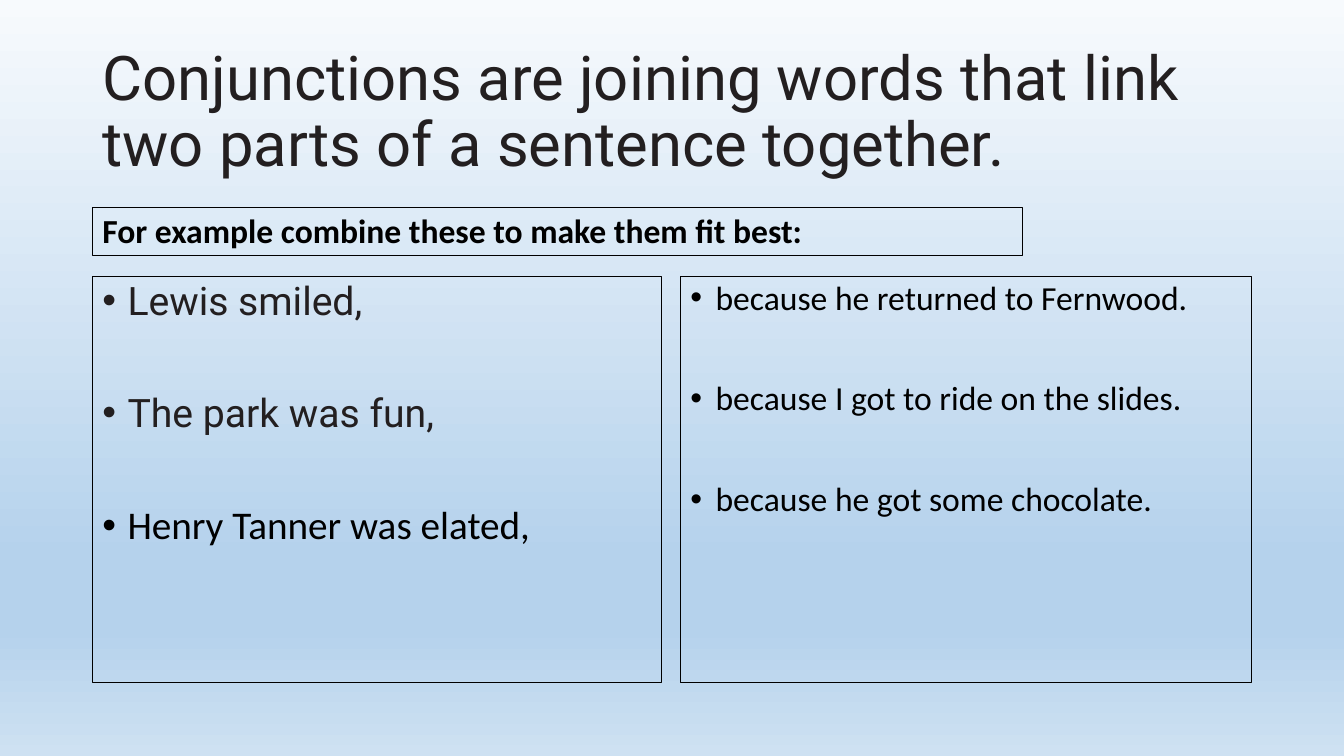
"""Builds a slide about conjunctions with two lists of sentence halves to combine."""
import pptx
import pptx.dml.color
import pptx.enum.text
import pptx.oxml
import pptx.oxml.ns
import pptx.util
import lxml.etree

Cm = pptx.util.Cm
Pt = pptx.util.Pt
qn = pptx.oxml.ns.qn
Anchor = pptx.enum.text.MSO_ANCHOR

COLOURS = {
    "ink": "231F20",
    "black": "000000",
    "sky_top": "F7FAFD",
    "sky_deep": "B5D2EC",
    "sky_bottom": "CEE1F2",
}
SKY_STOPS = [(0, "sky_top"), (74, "sky_deep"), (83, "sky_deep"), (100, "sky_bottom")]

ROBOTO = {"name": "Roboto", "colour": "ink"}
CALIBRI = {"name": "Calibri", "colour": "black"}
LEFT = 2.33
LIST_TOP, LIST_HEIGHT = 6.96, 10.23


def colour(name):
    return pptx.dml.color.RGBColor.from_string(COLOURS[name])


def add_box(slide, place, anchor, outlined, lines, gap=0, bulleted=False):
    shape = slide.shapes.add_textbox(*[Cm(length) for length in place])
    if outlined:
        shape.line.color.rgb = colour("black")
        shape.line.width = Pt(0.75)
    frame = shape.text_frame
    frame.word_wrap = True
    frame.vertical_anchor = anchor
    for index, (text, style) in enumerate(lines):
        paragraph = frame.paragraphs[0] if index == 0 else frame.add_paragraph()
        paragraph.line_spacing = 0.9
        paragraph.space_before = Pt(gap if index else 0)
        run = paragraph.add_run()
        run.text = text
        run.font.color.rgb = colour(style["colour"])
        for attribute in ("name", "size", "bold"):
            setattr(run.font, attribute, style.get(attribute))
        if bulleted:
            properties = paragraph._p.get_or_add_pPr()
            properties.set("marL", str(Cm(0.635)))
            properties.set("indent", str(-Cm(0.635)))
            lxml.etree.SubElement(properties, qn("a:buFont")).set("typeface", "Arial")
            lxml.etree.SubElement(properties, qn("a:buChar")).set("char", "•")


presentation = pptx.Presentation()
presentation.slide_width = Cm(33.87)
presentation.slide_height = Cm(19.05)
slide = presentation.slides.add_slide(presentation.slide_layouts[6])

sky = slide.background.fill
sky.gradient()
sky.gradient_angle = 270
stop_list = slide.element.find(".//" + qn("a:gsLst"))
for stop in list(stop_list):
    stop_list.remove(stop)
for position, name in SKY_STOPS:
    stop = lxml.etree.SubElement(stop_list, qn("a:gs"))
    stop.set("pos", str(position * 1000))
    lxml.etree.SubElement(stop, qn("a:srgbClr")).set("val", COLOURS[name])

title = "Conjunctions are joining words that link two parts of a sentence together."
add_box(slide, (LEFT, 1.02, 29.21, 3.68), Anchor.MIDDLE, False,
        [(title, {**ROBOTO, "size": Pt(44)})])

heading = "For example combine these to make them fit best:"
add_box(slide, (LEFT, 5.22, 23.43, 1.22), Anchor.BOTTOM, True,
        [(heading, {**CALIBRI, "size": Pt(24), "bold": True})])

sentence_lists = [
    (LEFT, 14.34, 28, 50, [
        ("Lewis smiled,", ROBOTO),
        ("The park was fun,", ROBOTO),
        ("Henry Tanner was elated,", CALIBRI),
    ]),
    (17.15, 14.4, 24, 46, [
        ("because he returned to Fernwood.", CALIBRI),
        ("because I got to ride on the slides.", CALIBRI),
        ("because he got some chocolate.", CALIBRI),
    ]),
]
for left, width, size, gap, sentences in sentence_lists:
    lines = [(text, {**style, "size": Pt(size)}) for text, style in sentences]
    add_box(slide, (left, LIST_TOP, width, LIST_HEIGHT), Anchor.TOP, True, lines, gap, True)

presentation.save("out.pptx")
